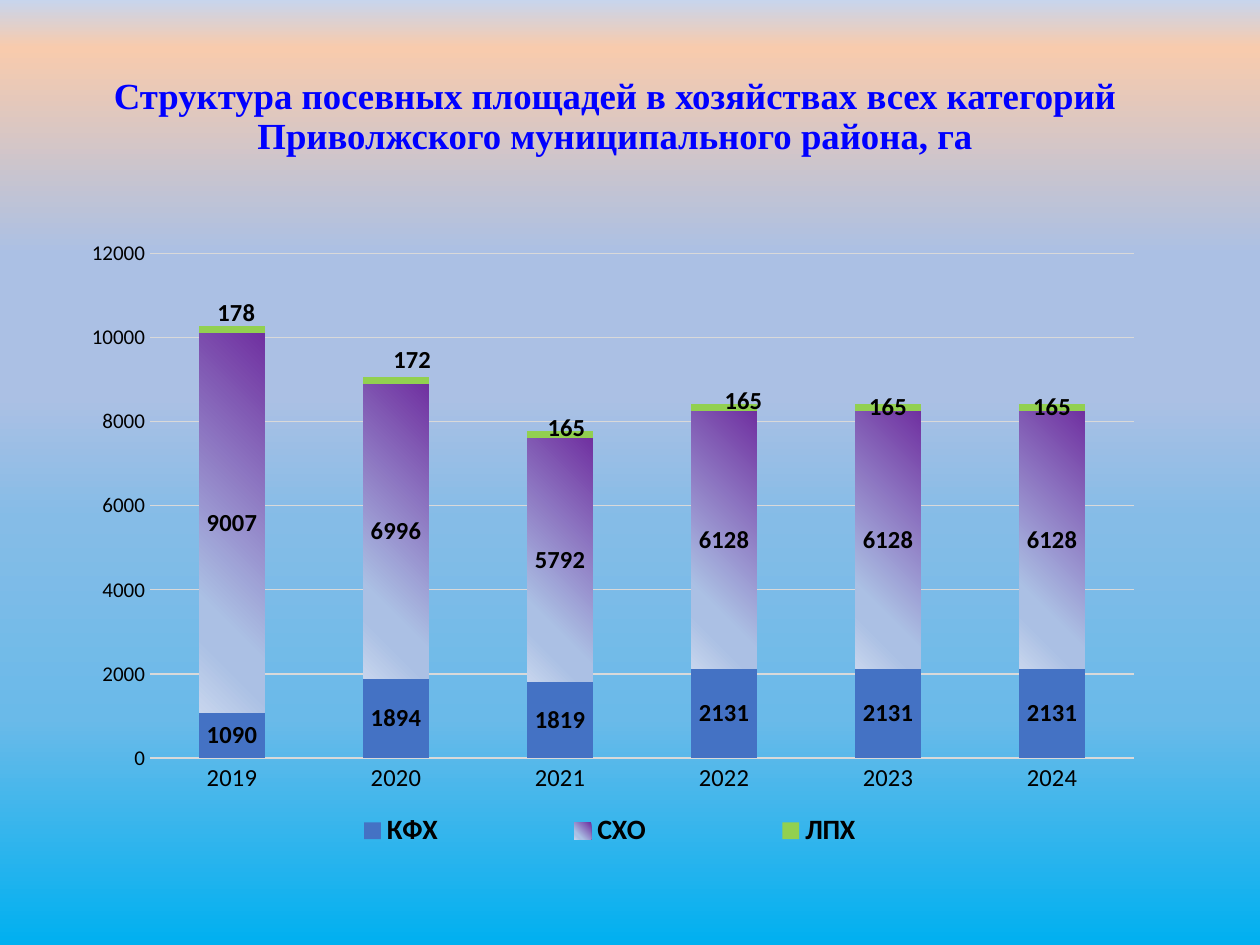
import pptx
import pptx.chart.data
import pptx.dml.color
import pptx.enum.chart
import pptx.enum.text
import pptx.oxml
import pptx.oxml.ns
import pptx.util
from pptx.util import Pt

# Content
TITLE = ("Структура посевных площадей в хозяйствах всех категорий "
         "Приволжского муниципального района, га")
YEARS = ["2019", "2020", "2021", "2022", "2023", "2024"]
BAR_GRADIENT = [(0, "7030A0"), (74, "ABC0E4"), (83, "ABC0E4"), (100, "C7D5ED")]
SERIES = [  # name, areas, solid colour or gradient stops
    ("КФХ", [1090, 1894, 1819, 2131, 2131, 2131], "4472C4"),
    ("СХО", [9007, 6996, 5792, 6128, 6128, 6128], BAR_GRADIENT),
    ("ЛПХ", [178, 172, 165, 165, 165, 165], "92D050"),
]
BACKGROUND = [(0, "00B0F0"), (24, "6ABAE9"), (45, "85BCE7"), (58, "ABC0E4"),
              (73, "ABC0E4"), (95, "F8CBAD"), (100, "C7D5ED")]

# Places: points on the slide, fractions of the chart inside it
TITLE_BOX = (42.5, 26, 618, 67.5)
CHART_BOX = (42.5, 130.3, 618, 360.7)
PLOT_PLACE = {"x": 0.07, "y": 0.04, "w": 0.91, "h": 0.8}
LEGEND_PLACE = {"x": 0.15, "y": 0.92, "w": 0.69, "h": 0.07}
TOP_LABEL_SHIFTS = [(0.004, -0.027), (0.015, -0.032), (0.006, -0.011), (0.018, -0.01)]

qn = pptx.oxml.ns.qn


def colour(value):
    return pptx.dml.color.RGBColor.from_string(value)


def set_font(font, size, value="000000", bold=False, name="Calibri"):
    font.size, font.bold, font.name = Pt(size), bold, name
    font.color.rgb = colour(value)


def paint_gradient(fill, element, stops, angle):
    """Swap the solid fill of an element for a linear gradient."""
    fill.solid()
    solid = next(element.iter(qn("a:solidFill")))
    stop_xml = "".join(f'<a:gs pos="{position * 1000}"><a:srgbClr val="{value}"/></a:gs>'
                       for position, value in stops)
    gradient = pptx.oxml.parse_xml(
        f'<a:gradFill {pptx.oxml.ns.nsdecls("a")} rotWithShape="1"><a:gsLst>{stop_xml}</a:gsLst>'
        f'<a:lin ang="{angle * 60000}" scaled="0"/></a:gradFill>')
    solid.getparent().replace(solid, gradient)


def place_manually(element, index, place, edge=False, inner=False):
    """Give a chart part a manual layout as its child number index."""
    for old in element.findall(qn("c:layout")):
        element.remove(old)
    parts = '<c:layoutTarget val="inner"/>' if inner else ""
    if edge:
        parts += '<c:xMode val="edge"/><c:yMode val="edge"/>'
    parts += "".join(f'<c:{key} val="{value}"/>' for key, value in place.items())
    element.insert(index, pptx.oxml.parse_xml(
        f'<c:layout {pptx.oxml.ns.nsdecls("c")}><c:manualLayout>{parts}'
        '</c:manualLayout></c:layout>'))


presentation = pptx.Presentation()
presentation.slide_width, presentation.slide_height = Pt(720), Pt(540)
slide = presentation.slides.add_slide(presentation.slide_layouts[5])
paint_gradient(slide.background.fill, slide.element, BACKGROUND, 270)

# Title
title = slide.shapes.title
title.left, title.top, title.width, title.height = map(Pt, TITLE_BOX)
title.text_frame.text = TITLE
title.text_frame.word_wrap = True
title.text_frame.auto_size = pptx.enum.text.MSO_AUTO_SIZE.NONE
title.text_frame.vertical_anchor = pptx.enum.text.MSO_ANCHOR.BOTTOM
paragraph = title.text_frame.paragraphs[0]
paragraph.alignment = pptx.enum.text.PP_ALIGN.CENTER
paragraph.line_spacing = 0.9
set_font(paragraph.font, 21, "0000FF", True, "Times New Roman")

# Chart
chart_data = pptx.chart.data.CategoryChartData()
chart_data.categories = YEARS
for name, areas, paint in SERIES:
    chart_data.add_series(name, areas)
chart = slide.shapes.add_chart(pptx.enum.chart.XL_CHART_TYPE.COLUMN_STACKED,
                               *map(Pt, CHART_BOX), chart_data).chart
set_font(chart.font, 10)
chart.has_title = False
plot = chart.plots[0]
plot.gap_width, plot.overlap = 150, 100
plot.vary_by_categories = False

# Axes
for axis, size in ((chart.category_axis, 14), (chart.value_axis, 12)):
    set_font(axis.tick_labels.font, size)
    axis.major_tick_mark = pptx.enum.chart.XL_TICK_MARK.NONE
    axis.minor_tick_mark = pptx.enum.chart.XL_TICK_MARK.NONE
    axis.format.line.fill.background()
value_axis = chart.value_axis
value_axis.minimum_scale, value_axis.maximum_scale, value_axis.major_unit = 0, 12000, 2000
gridline = value_axis.major_gridlines.format.line
gridline.color.rgb, gridline.width = colour("D9D9D9"), Pt(0.75)

# Series with value labels
for series, (name, areas, paint) in zip(plot.series, SERIES):
    fill = series.format.fill
    if isinstance(paint, str):
        fill.solid()
        fill.fore_color.rgb = colour(paint)
    else:
        paint_gradient(fill, series._element, paint, 135)
    labels = series.data_labels
    labels.show_value = True
    set_font(labels.font, 14, bold=True)

# Shifted labels of the thin top series
top_series = plot.series[len(SERIES) - 1]
for index in range(len(TOP_LABEL_SHIFTS)):
    set_font(top_series.points[index].data_label.font, 14, bold=True)
for label, (x, y) in zip(top_series._element.iter(qn("c:dLbl")), TOP_LABEL_SHIFTS):
    place_manually(label, 1, {"x": x, "y": y})

# Legend and plot area
chart.has_legend = True
legend = chart.legend
legend.position = pptx.enum.chart.XL_LEGEND_POSITION.BOTTOM
legend.include_in_layout = False
set_font(legend.font, 16, bold=True)
place_manually(legend._element, 1, LEGEND_PLACE, edge=True)
plot_area = next(chart.element.iter(qn("c:plotArea")))
place_manually(plot_area, 0, PLOT_PLACE, edge=True, inner=True)

presentation.save("out.pptx")
